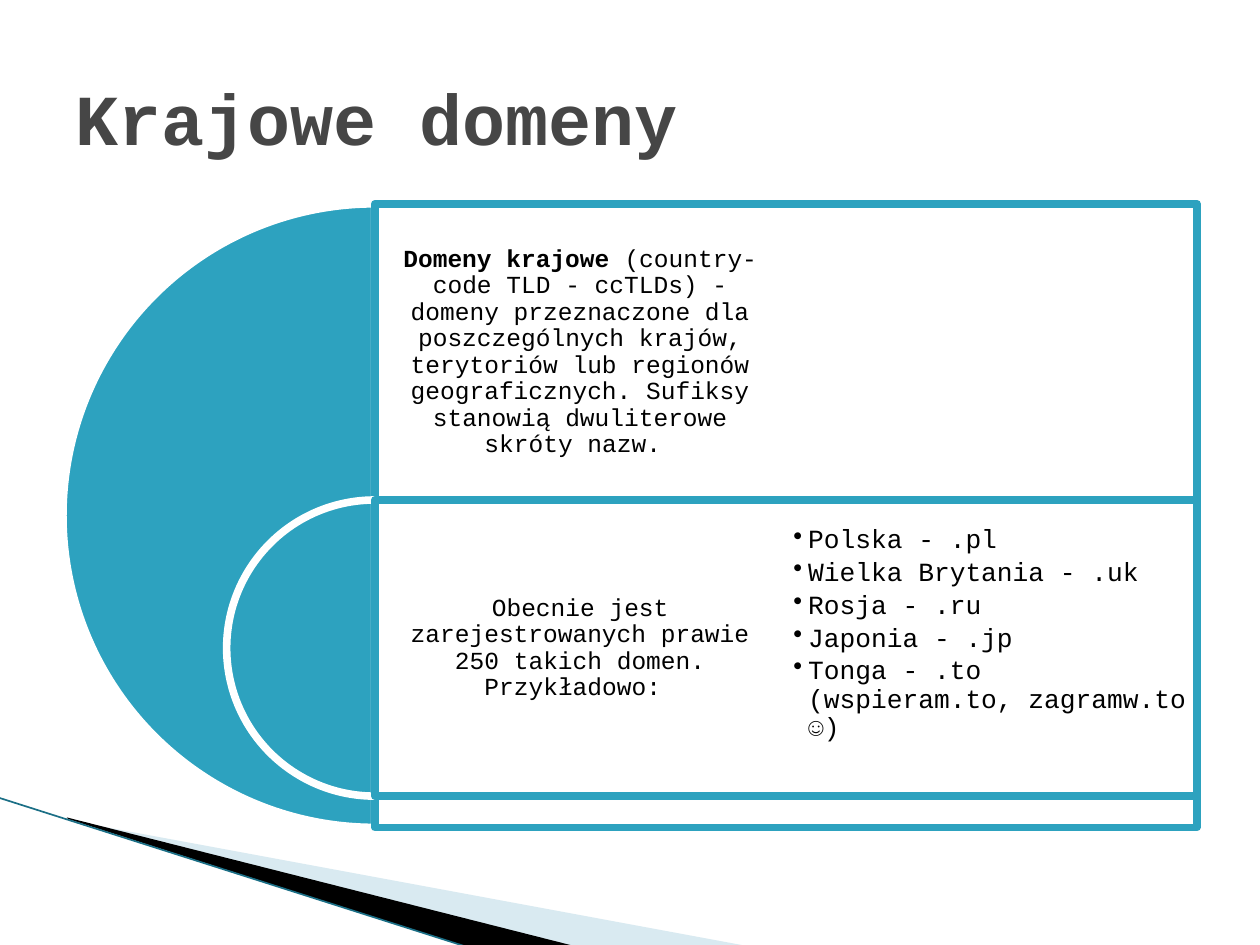
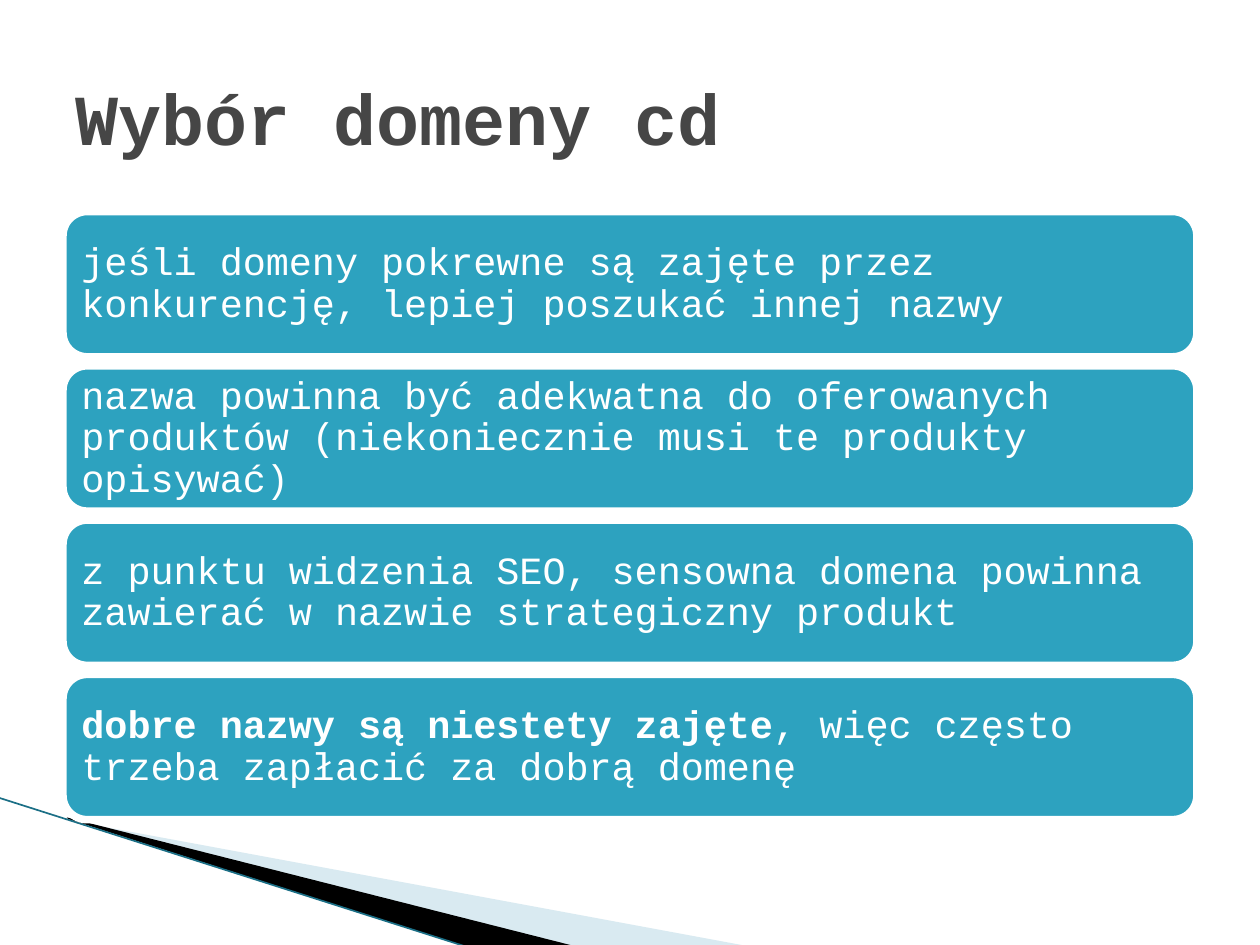
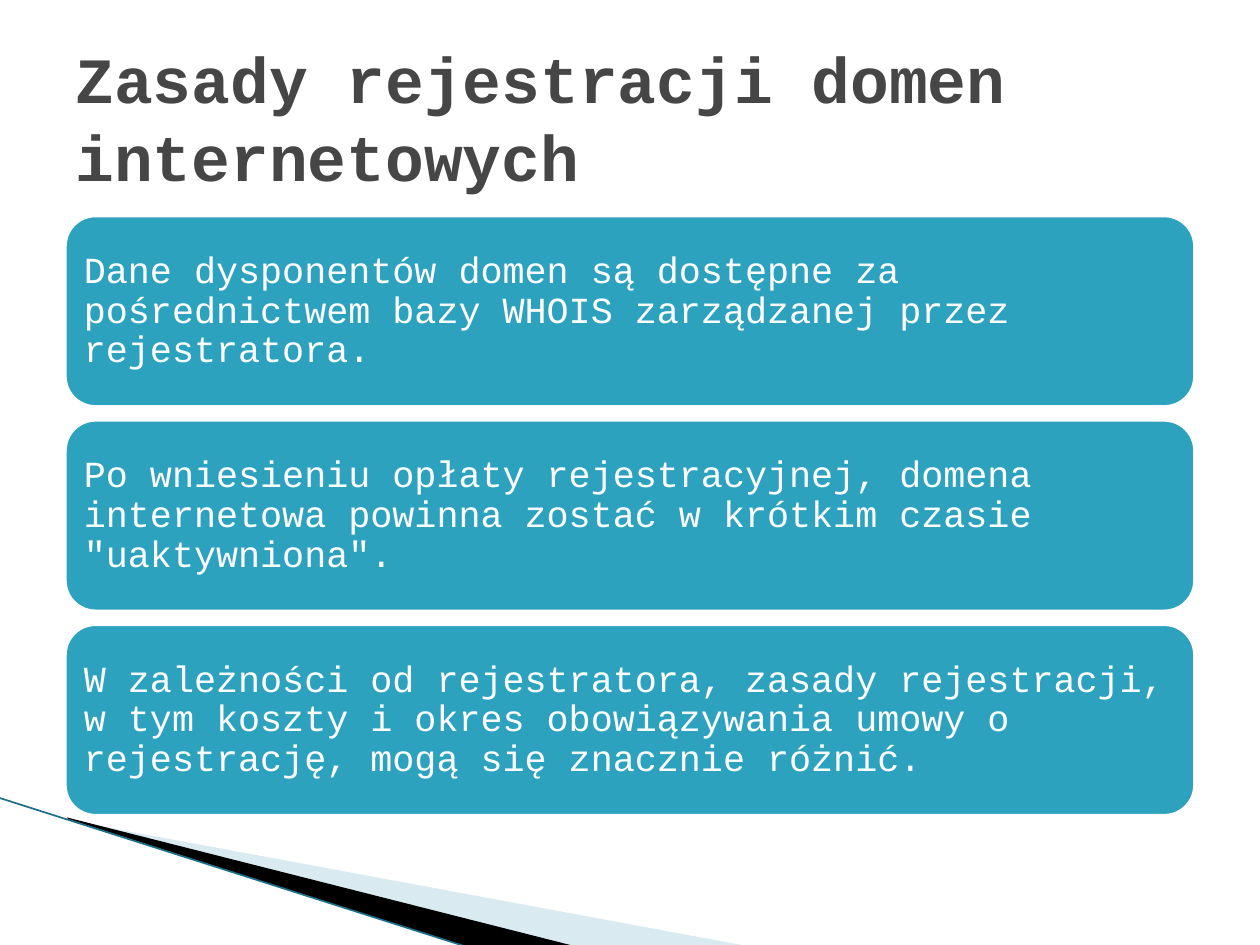
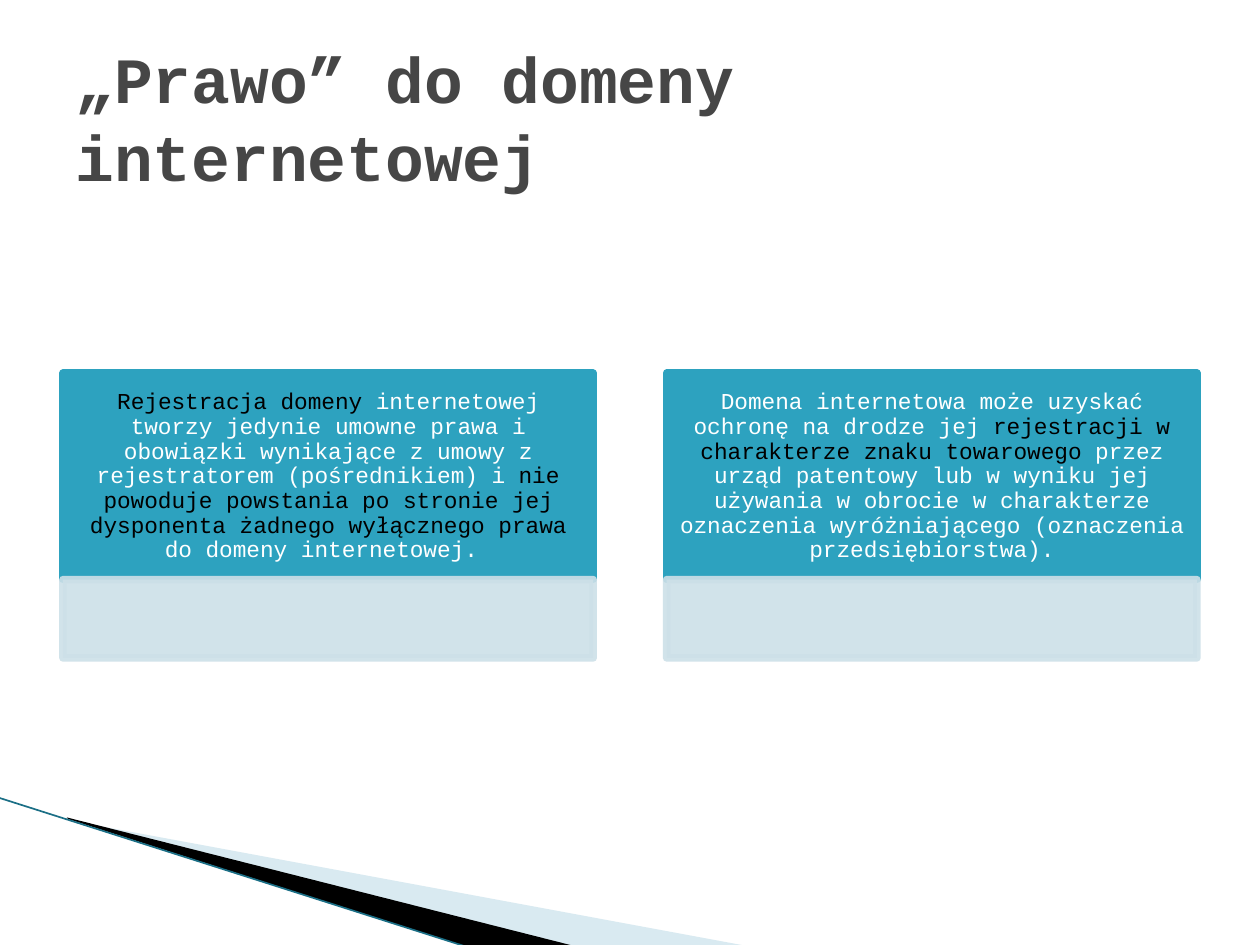
import lxml.etree
import pptx
import pptx.dml.color
import pptx.enum.shapes
import pptx.enum.text
import pptx.oxml.ns
import pptx.util

Cm = pptx.util.Cm
Pt = pptx.util.Pt
qn = pptx.oxml.ns.qn
SHAPE = pptx.enum.shapes.MSO_SHAPE
ALIGN = pptx.enum.text.PP_ALIGN

COLORS = {
    "teal": "2DA2BF",
    "white": "FFFFFF",
    "black": "000000",
    "title": "464646",
    "pale": "CDE0E8",
    "wedge": "A0CBDC",
    "edge": "1B6F86",
}
FONT = "Courier New"
LINE = 4.33
BODY = (1.27, 4.11, 22.86, 12.57)


def rgb(name):
    return pptx.dml.color.RGBColor.from_string(COLORS[name])


def fade(part, share):
    """Make every colour below an XML part partly opaque, in percent."""
    for node in part.iter(qn("a:srgbClr")):
        lxml.etree.SubElement(node, qn("a:alpha"), val=str(share * 1000))


def paint(shape, fill, line=None):
    shape.shadow.inherit = False
    shape.fill.solid()
    shape.fill.fore_color.rgb = rgb(fill)
    if line:
        shape.line.color.rgb = rgb(line)
        shape.line.width = Pt(LINE)
    else:
        shape.line.fill.background()


def block(slide, kind, box, fill, line):
    shape = slide.shapes.add_shape(kind, *map(Cm, box))
    paint(shape, fill, line)
    return shape


def write(para, parts, size, color, align=ALIGN.LEFT, space=0.9):
    """Fill a paragraph from (words, colour or None, bold) parts."""
    para.alignment = align
    para.line_spacing = space
    for words, tint, bold in parts:
        run = para.add_run()
        run.text = words
        run.font.name = FONT
        run.font.size = Pt(size)
        run.font.bold = bold
        run.font.color.rgb = rgb(tint or color)


def frame(shape, side, edge):
    """Set wrapping, middle anchor and insets; return the text frame."""
    text = shape.text_frame
    text.word_wrap = True
    text.vertical_anchor = pptx.enum.text.MSO_ANCHOR.MIDDLE
    text.margin_left = text.margin_right = Cm(side)
    text.margin_top = text.margin_bottom = Cm(edge)
    return text


def label(slide, box, side=0.15, edge=0.15):
    return frame(slide.shapes.add_textbox(*map(Cm, box)), side, edge)


def plain(words):
    return [(words, None, False)]


def corner(slide):
    """Draw the wedges and the line at the bottom left."""
    wedges = [
        ("wedge", 40, [(1.4, 16.54), (15.11, 19.08), (11.58, 19.08), (1.4, 16.51)]),
        ("black", 100, [(1.35, 16.48), (11.61, 19.08), (9.45, 19.1), (1.37, 16.51)]),
    ]
    for color, share, points in wedges:
        first, *rest = [(Cm(x), Cm(y)) for x, y in points]
        path = slide.shapes.build_freeform(*first)
        path.add_line_segments(rest)
        wedge = path.convert_to_shape()
        paint(wedge, color)
        if share < 100:
            fade(wedge._element.spPr, share)
    edge = slide.shapes.add_connector(
        pptx.enum.shapes.MSO_CONNECTOR.STRAIGHT,
        Cm(-0.03), Cm(16.08), Cm(9.45), Cm(19.1))
    edge.line.color.rgb = rgb("edge")
    edge.line.width = Pt(0.95)
    lxml.etree.SubElement(edge._element.spPr, qn("a:effectLst"))


def start(deck, title, size=41):
    slide = deck.slides.add_slide(deck.slide_layouts[6])
    corner(slide)
    text = label(slide, (1.27, 0.76, 22.86, 3.18), 0.25, 0.13)
    write(text.paragraphs[0], [(title, None, True)], size, "title", space=1.0)
    return slide


def layer(slide, box, disc):
    """Draw a half disc of the given size and the panel to its right."""
    left, top, width, height = box
    half = block(slide, SHAPE.PIE, (left - disc / 2, top, disc, disc), "teal", "white")
    half.adjustments[0], half.adjustments[1] = 54, 162
    panel = block(slide, SHAPE.RECTANGLE, (left, top, width, height), "white", "teal")
    fade(panel._element.spPr.find(qn("a:solidFill")), 90)


def bullets(slide, box, items):
    text = label(slide, box)
    text.margin_bottom = Cm(0.71)
    text.text = "\n".join(items)
    for para in text.paragraphs:
        para.line_spacing = 0.9
        para.space_after = Pt(2.5)
        props = para._p.get_or_add_pPr()
        props.set("marL", str(Cm(0.3)))
        props.set("indent", str(-Cm(0.3)))
        lxml.etree.SubElement(props, qn("a:buChar"), char="•")
        for run in para.runs:
            run.font.name = FONT
            run.font.size = Pt(15)
            run.font.color.rgb = rgb("black")


def target(slide, box, notes, items):
    """Stack half discs with a note each and bullets beside the last note."""
    left, top, width, height = box
    mid = left + height / 2
    wide = width - height / 2
    row = 5.97
    col = wide / 2
    for i, note in enumerate(notes):
        disc = row if i else height
        y = top + i * row
        layer(slide, (mid, y, wide, disc), disc)
        text = label(slide, (mid, y, col, row))
        write(text.paragraphs[0], note, 14, "black", ALIGN.CENTER)
    bullets(slide, (mid + col, y, col, row), items)


def bars(slide, box, high, size, notes):
    """Stack rounded bars evenly, centred in the box."""
    left, top, width, height = box
    gap = 0.18
    step = high + gap
    first = top + (height - len(notes) * step + gap) / 2
    for i, note in enumerate(notes):
        bar = block(slide, SHAPE.ROUNDED_RECTANGLE,
                    (left, first + i * step, width, high), "teal", "white")
        write(frame(bar, 0.23, 0.23).paragraphs[0], note, size, "white")


def cards(slide, box, notes):
    """Set cards with a pale foot side by side, centred in the box."""
    left, top, width, height = box
    wide, head, foot = 10.69, 4.16, 1.58
    step = (width - wide) / (len(notes) - 1)
    y = top + (height - head - foot) / 2
    for i, note in enumerate(notes):
        x = left + i * step
        card = block(slide, SHAPE.RECTANGLE, (x, y, wide, head), "teal", "teal")
        write(frame(card, 0.24, 0.15).paragraphs[0], note, 13, "white", ALIGN.CENTER)
        base = block(slide, SHAPE.RECTANGLE, (x, y + head, wide, foot), "pale", "pale")
        fade(base._element.spPr, 90)


def main():
    deck = pptx.Presentation()
    deck.slide_width, deck.slide_height = Cm(25.4), Cm(19.05)

    slide = start(deck, "Krajowe domeny")
    target(slide, BODY, [
        [("Domeny krajowe ", None, True),
         ("(country-code TLD - ccTLDs) - domeny przeznaczone dla poszczególnych "
          "krajów, terytoriów lub regionów geograficznych. Sufiksy stanowią "
          "dwuliterowe skróty nazw. ", None, False)],
        plain("Obecnie jest zarejestrowanych prawie 250 takich domen. Przykładowo: "),
    ], [
        "Polska - .pl",
        "Wielka Brytania - .uk",
        "Rosja - .ru",
        "Japonia - .jp",
        "Tonga - .to (wspieram.to, zagramw.to ☺)",
    ])

    slide = start(deck, "Wybór domeny cd")
    bars(slide, BODY, 2.93, 22, [
        plain("jeśli domeny pokrewne są zajęte przez konkurencję, lepiej poszukać "
              "innej nazwy"),
        plain("nazwa powinna być adekwatna do oferowanych produktów "
              "(niekoniecznie musi te produkty opisywać)"),
        plain("z punktu widzenia SEO, sensowna domena powinna zawierać w nazwie "
              "strategiczny produkt"),
        [("dobre nazwy są niestety zajęte", None, True),
         (", więc często trzeba zapłacić za dobrą domenę", None, False)],
    ])

    slide = start(deck, "Zasady rejestracji domen internetowych", 36.9)
    bars(slide, BODY, 3.94, 21, [
        plain("Dane dysponentów domen są dostępne za pośrednictwem bazy WHOIS "
              "zarządzanej przez rejestratora."),
        plain("Po wniesieniu opłaty rejestracyjnej, domena internetowa powinna "
              "zostać w krótkim czasie \"uaktywniona\"."),
        plain("W zależności od rejestratora, zasady rejestracji, w tym koszty i "
              "okres obowiązywania umowy o rejestrację, mogą się znacznie różnić."),
    ])

    slide = start(deck, "„Prawo” do domeny internetowej", 36.9)
    cards(slide, BODY, [
        [("Rejestracja domeny ", "black", False),
         ("internetowej tworzy jedynie umowne prawa i obowiązki wynikające z "
          "umowy z rejestratorem (pośrednikiem) i ", None, False),
         ("nie powoduje powstania po stronie jej dysponenta żadnego wyłącznego "
          "prawa", "black", False),
         (" do domeny internetowej. ", None, False)],
        [("Domena internetowa może uzyskać ochronę na drodze jej ", None, False),
         ("rejestracji w charakterze znaku towarowego ", "black", False),
         ("przez urząd patentowy lub w wyniku jej używania w obrocie w "
          "charakterze oznaczenia wyróżniającego (oznaczenia "
          "przedsiębiorstwa).", None, False)],
    ])

    deck.save("out.pptx")


if __name__ == "__main__":
    main()
